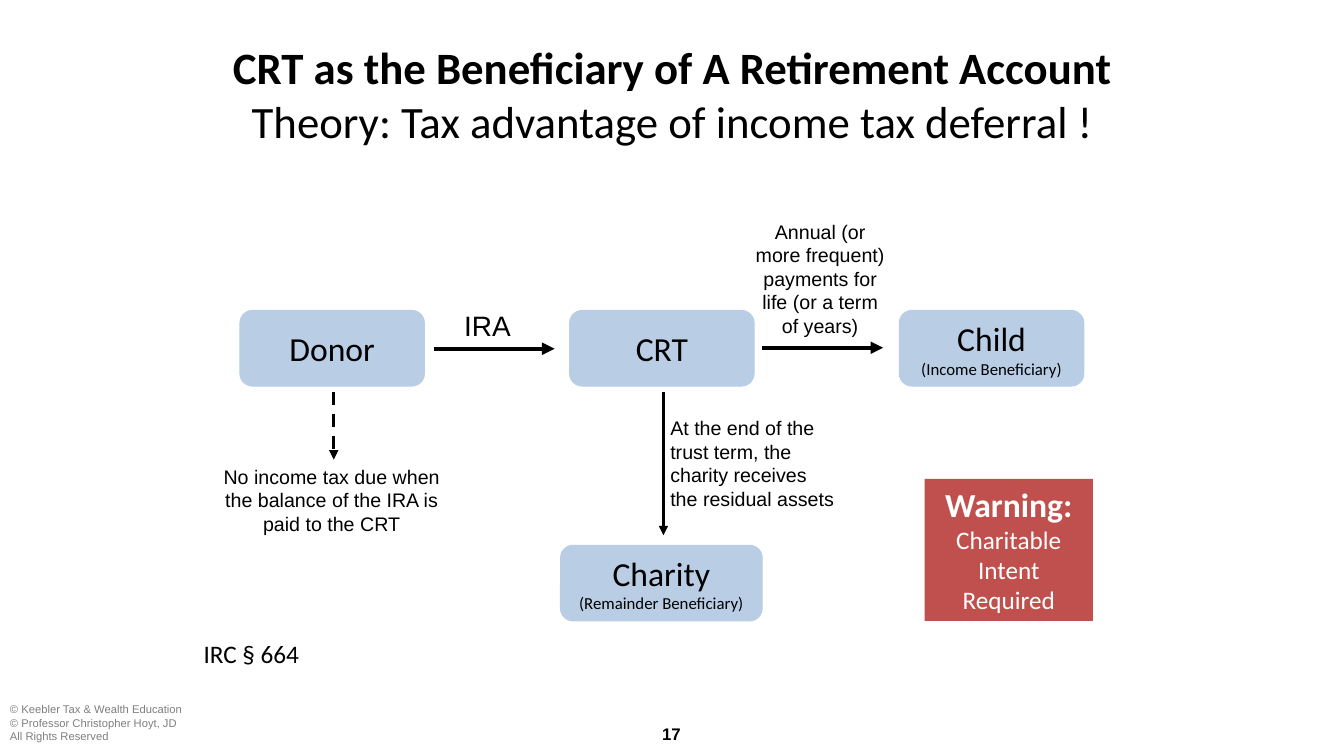
from dataclasses import dataclass

from lxml.etree import SubElement
from pptx import Presentation
from pptx.dml.color import RGBColor
from pptx.enum.dml import MSO_LINE
from pptx.enum.shapes import MSO_CONNECTOR, MSO_SHAPE
from pptx.enum.text import MSO_ANCHOR, PP_ALIGN
from pptx.oxml.ns import qn
from pptx.util import Inches, Pt

COLORS = {"black": "000000", "white": "FFFFFF", "gray": "7F7F7F",
          "box": "B9CDE5", "warning": "C0504D"}


@dataclass
class Span:
    text: str
    size: float
    bold: bool = False


Paragraphs = list[list[Span]]


@dataclass
class Label:
    left: float
    top: float
    width: float
    height: float
    paragraphs: Paragraphs
    font: str = "Arial"
    color: str = "black"
    align: PP_ALIGN = PP_ALIGN.CENTER
    anchor: MSO_ANCHOR = MSO_ANCHOR.TOP
    wrap: bool = True


@dataclass
class Box:
    left: float
    top: float
    width: float
    name: str
    role: str = ""


@dataclass
class Arrow:
    x1: float
    y1: float
    x2: float
    y2: float
    weight: float
    dashed: bool = False


BOX_HEIGHT = 0.75
BOXES = [
    Box(2.38, 3.08, 1.83, "Donor"),
    Box(5.65, 3.08, 1.83, "CRT"),
    Box(8.92, 3.08, 1.83, "Child", "(Income Beneficiary)"),
    Box(5.56, 5.41, 2, "Charity", "(Remainder Beneficiary)"),
]
ARROWS = [
    Arrow(3.31, 3.89, 3.31, 4.56, 2.25, dashed=True),
    Arrow(4.3, 3.46, 5.5, 3.46, 3),
    Arrow(6.58, 3.89, 6.58, 5.31, 2.25),
    Arrow(7.56, 3.45, 8.76, 3.45, 3),
]
COPYRIGHT = ["© Keebler Tax & Wealth Education",
             "© Professor Christopher Hoyt, JD", "All Rights Reserved"]
LABELS = [
    Label(2.17, 0.3, 9, 1.25,
          [[Span("CRT as the Beneficiary of A Retirement Account", 32, True)],
           [Span("Theory: Tax advantage of income tax deferral !", 32)]],
          font="Calibri", anchor=MSO_ANCHOR.MIDDLE),
    Label(4.41, 3.01, 0.85, 0.44, [[Span("IRA", 20)]]),
    Label(2.04, 4.56, 2.5, 0.81,
          [[Span("No income tax due when the balance of the IRA is paid to the CRT", 14)]]),
    Label(6.55, 4.08, 1.83, 1.04,
          [[Span("At the end of the trust term, the charity receives the residual assets", 14)]],
          align=PP_ALIGN.LEFT),
    Label(7.37, 2.13, 1.53, 1.28,
          [[Span("Annual (or more frequent) payments for life (or a term of years)", 14)]]),
    Label(1.92, 6.28, 1.22, 0.4, [[Span("IRC § 664", 18)]],
          font="Calibri", align=PP_ALIGN.LEFT, wrap=False),
    Label(0, 6.92, 1.95, 0.5, [[Span(line, 8)] for line in COPYRIGHT],
          color="gray", align=PP_ALIGN.LEFT, wrap=False),
    Label(6.16, 7.13, 1, 0.3, [[Span("17", 12, True)]]),
]
WARNING = Label(9.17, 4.75, 1.67, 1.41,
                [[Span("Warning: ", 24, True), Span("Charitable Intent Required", 18)]],
                font="Calibri", color="white")


def rgb(name: str) -> RGBColor:
    return RGBColor.from_string(COLORS[name])


def write_text(sp, label: Label) -> None:
    tf = sp.text_frame
    tf.word_wrap = label.wrap
    tf.vertical_anchor = label.anchor
    for i, spans in enumerate(label.paragraphs):
        p = tf.add_paragraph() if i else tf.paragraphs[0]
        p.alignment = label.align
        for span in spans:
            r = p.add_run()
            r.text = span.text
            r.font.name = label.font
            r.font.size = Pt(span.size)
            r.font.bold = span.bold
            r.font.color.rgb = rgb(label.color)


def add_label(slide, label: Label) -> None:
    sp = slide.shapes.add_textbox(Inches(label.left), Inches(label.top),
                                  Inches(label.width), Inches(label.height))
    write_text(sp, label)


def add_panel(slide, shape: MSO_SHAPE, label: Label, fill: str):
    sp = slide.shapes.add_shape(shape, Inches(label.left), Inches(label.top),
                                Inches(label.width), Inches(label.height))
    sp.shadow.inherit = False
    sp.fill.solid()
    sp.fill.fore_color.rgb = rgb(fill)
    sp.line.fill.background()
    write_text(sp, label)
    return sp


def add_box(slide, box: Box) -> None:
    paragraphs = [[Span(box.name, 24)]]
    if box.role:
        paragraphs.append([Span(box.role, 12)])
    label = Label(box.left, box.top, box.width, BOX_HEIGHT, paragraphs,
                  font="Calibri", anchor=MSO_ANCHOR.MIDDLE, wrap=False)
    sp = add_panel(slide, MSO_SHAPE.ROUNDED_RECTANGLE, label, "box")
    sp.line.color.rgb = rgb("box")
    sp.line.width = Pt(0.75)


def add_arrow(slide, arrow: Arrow) -> None:
    cxn = slide.shapes.add_connector(MSO_CONNECTOR.STRAIGHT,
                                     Inches(arrow.x1), Inches(arrow.y1),
                                     Inches(arrow.x2), Inches(arrow.y2))
    cxn.line.color.rgb = rgb("black")
    cxn.line.width = Pt(arrow.weight)
    if arrow.dashed:
        cxn.line.dash_style = MSO_LINE.DASH
    spPr = cxn._element.spPr
    SubElement(spPr.find(qn("a:ln")), qn("a:tailEnd"), type="triangle")
    SubElement(spPr, qn("a:effectLst"))


def main() -> None:
    """Build the slide on a charitable remainder trust as IRA beneficiary."""
    prs = Presentation()
    prs.slide_width, prs.slide_height = Inches(13.33), Inches(7.5)
    s = prs.slides.add_slide(prs.slide_layouts[6])
    for box in BOXES:
        add_box(s, box)
    for arrow in ARROWS:
        add_arrow(s, arrow)
    add_panel(s, MSO_SHAPE.RECTANGLE, WARNING, "warning")
    for label in LABELS:
        add_label(s, label)
    prs.save("out.pptx")


if __name__ == "__main__":
    main()
